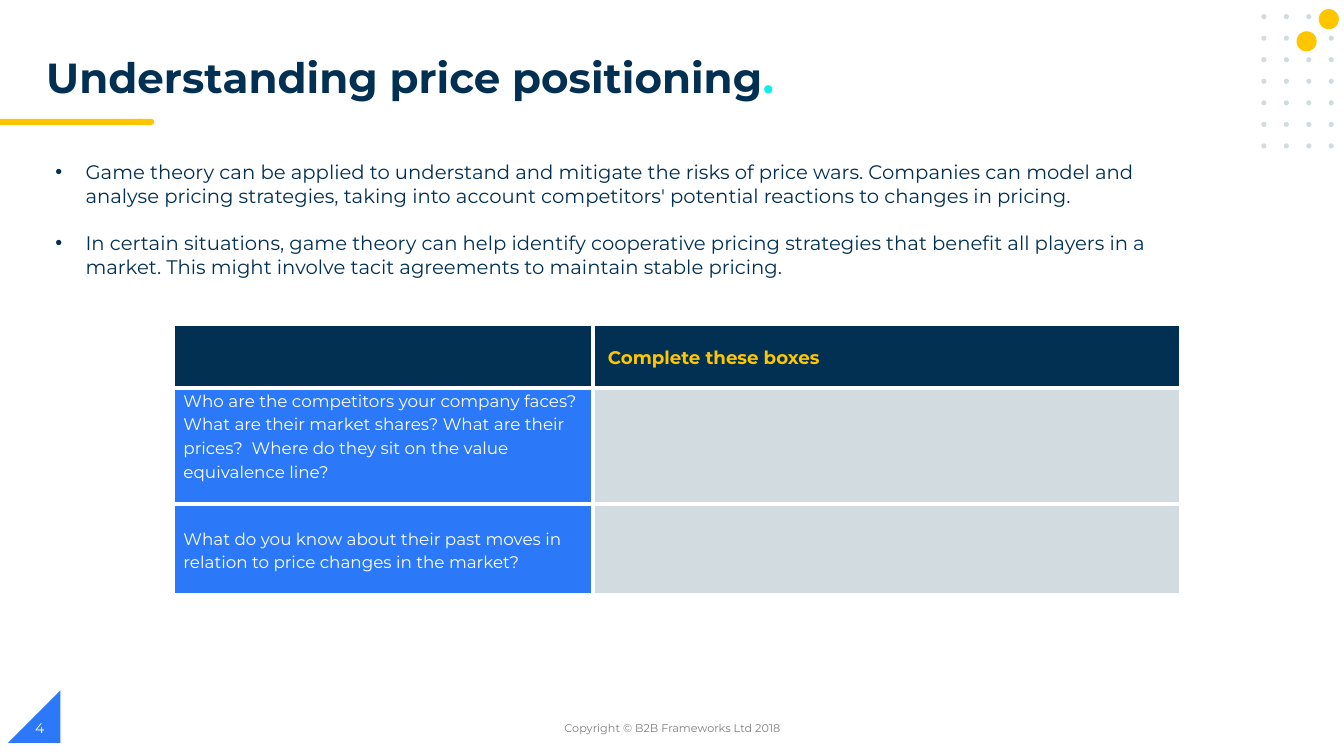
import pptx
import pptx.util
import pptx.dml.color
import pptx.enum.shapes
import pptx.enum.text
import pptx.oxml
import pptx.oxml.ns
from lxml import etree

RGB = pptx.dml.color.RGBColor
NAVY = RGB(0x02, 0x30, 0x53)
BLUE = RGB(0x2B, 0x79, 0xF8)
YELLOW = RGB(0xFF, 0xC6, 0x00)
CYAN = RGB(0x0E, 0xEC, 0xEC)
PALE = RGB(0xD1, 0xDB, 0xE0)
GREY = RGB(0x7F, 0x7F, 0x7F)
WHITE = RGB(0xFF, 0xFF, 0xFF)

SHAPE = pptx.enum.shapes.MSO_SHAPE
ANCHOR = pptx.enum.text.MSO_ANCHOR
ALIGN = pptx.enum.text.PP_ALIGN


class Deck:
    """Style and current slide; lengths are percent of slide width and height."""
    font = "Montserrat"

    def __init__(self, width, height):
        self.prs = pptx.Presentation()
        self.prs.slide_width = pptx.util.Inches(width)
        self.prs.slide_height = pptx.util.Inches(height)
        self.s = self.prs.slides.add_slide(self.prs.slide_layouts[6])

    def x(self, share):
        return round(self.prs.slide_width * share / 100)

    def y(self, share):
        return round(self.prs.slide_height * share / 100)

    def box(self, left, top, width, height):
        return self.x(left), self.y(top), self.x(width), self.y(height)

    def shape(self, kind, at, color, flip=False):
        sp = self.s.shapes.add_shape(kind, *self.box(*at))
        sp.shadow.inherit = False
        sp.fill.solid()
        sp.fill.fore_color.rgb = color
        sp.line.fill.background()
        if flip:
            sp._element.spPr.get_or_add_xfrm().set("flipH", "1")

    def run(self, p, text, size, color, bold=False):
        r = p.add_run()
        r.text = text
        r.font.name = self.font
        r.font.size = pptx.util.Pt(size)
        r.font.bold = bold
        r.font.color.rgb = color

    def frame(self, at, anchor=ANCHOR.TOP):
        tf = self.s.shapes.add_textbox(*self.box(*at)).text_frame
        tf.word_wrap = True
        tf.vertical_anchor = anchor
        return tf

    def text(self, at, runs, anchor=ANCHOR.TOP, align=ALIGN.LEFT, spacing=1.0):
        p = self.frame(at, anchor).paragraphs[0]
        p.alignment = align
        p.line_spacing = spacing
        for r in runs:
            self.run(p, *r)

    def bullets(self, at, items, size, color, gap):
        tf = self.frame(at)
        for i, item in enumerate(items):
            p = tf.add_paragraph() if i else tf.paragraphs[0]
            pPr = p._p.get_or_add_pPr()
            pPr.set("marL", str(pptx.util.Inches(0.31)))
            pPr.set("indent", str(pptx.util.Inches(-0.3)))
            if i:
                p.space_before = pptx.util.Pt(gap)
            buClr = etree.SubElement(pPr, pptx.oxml.ns.qn("a:buClr"))
            etree.SubElement(buClr, pptx.oxml.ns.qn("a:srgbClr"), val=str(color))
            etree.SubElement(pPr, pptx.oxml.ns.qn("a:buFont"), typeface="Arial")
            etree.SubElement(pPr, pptx.oxml.ns.qn("a:buChar"), char="•")
            self.run(p, item, size, color)

    def table(self, left, top, cols, rows):
        at = self.box(left, top, sum(cols), sum(rows))
        tb = self.s.shapes.add_table(len(rows), len(cols), *at).table
        tb.first_row = tb.horz_banding = False
        for col, width in zip(tb.columns, cols):
            col.width = self.x(width)
        for row, height in zip(tb.rows, rows):
            row.height = self.y(height)
        return tb

    def cell(self, c, fill, text="", size=12, color=WHITE, bold=False,
             anchor=ANCHOR.MIDDLE, inset=0.1):
        c.fill.solid()
        c.fill.fore_color.rgb = fill
        c.vertical_anchor = anchor
        c.margin_left = pptx.util.Inches(inset)
        c.margin_right = pptx.util.Inches(0.1)
        c.margin_top = c.margin_bottom = 0
        if text:
            p = c.text_frame.paragraphs[0]
            p.line_spacing = 1.15
            self.run(p, text, size, color, bold)
        # White borders go ahead of the fill
        tcPr = c._tc.get_or_add_tcPr()
        for i, side in enumerate("LRTB"):
            tcPr.insert(i, pptx.oxml.parse_xml(
                f'<a:ln{side} {pptx.oxml.ns.nsdecls("a")} w="{pptx.util.Pt(3)}">'
                f'<a:solidFill><a:srgbClr val="{WHITE}"/></a:solidFill></a:ln{side}>'))


def main():
    deck = Deck(13.33, 7.5)

    # Corner triangle and title rule
    deck.shape(SHAPE.RIGHT_TRIANGLE, (0.6, 91.33, 3.9, 6.93), BLUE, flip=True)
    deck.shape(SHAPE.FLOWCHART_TERMINATOR, (10.05, 15.73, 1.43, 0.8), YELLOW)
    deck.shape(SHAPE.RECTANGLE, (0, 15.73, 10.58, 0.8), YELLOW)

    # Dot grid with two highlights
    for row in range(7):
        for col in range(4):
            at = (93.85 + 1.67 * col, 1.87 + 2.85 * row, 0.38, 0.67)
            deck.shape(SHAPE.OVAL, at, PALE)
    for left, top in ((98.12, 1.2), (96.47, 4.13)):
        deck.shape(SHAPE.OVAL, (left, top, 1.5, 2.67), YELLOW)

    # Footer
    deck.text((33.16, 93.6, 33.76, 5.33),
              [("Copyright © B2B Frameworks Ltd 2018", 8, GREY)],
              ANCHOR.MIDDLE, ALIGN.CENTER)
    deck.text((1.88, 93.6, 22.5, 5.33), [("4", 10, WHITE)], ANCHOR.MIDDLE)

    # Title and bullets
    deck.text((2.7, 6.93, 69.54, 8),
              [("Understanding price positioning", 30, NAVY, True),
               (".", 30, CYAN, True)], spacing=0.9)
    deck.bullets((3.3, 20.53, 85.75, 17.07), [
        "Game theory can be applied to understand and mitigate the risks of price "
        "wars. Companies can model and analyse pricing strategies, taking into "
        "account competitors' potential reactions to changes in pricing.",
        "In certain situations, game theory can help identify cooperative pricing "
        "strategies that benefit all players in a market. This might involve tacit "
        "agreements to maintain stable pricing.",
    ], 14, NAVY, gap=17)

    # Worksheet table
    tb = deck.table(12.9, 42.93, (31.21, 43.74), (8.4, 15.33, 12))
    deck.cell(tb.cell(0, 0), NAVY)
    deck.cell(tb.cell(0, 1), NAVY, "Complete these boxes", 13, YELLOW, True,
              inset=0.15)
    questions = (
        ("Who are the competitors your company faces? What are their market "
         "shares? What are their prices?  Where do they sit on the value "
         "equivalence line?", ANCHOR.TOP),
        ("What do you know about their past moves in relation to price changes "
         "in the market?", ANCHOR.MIDDLE),
    )
    for row, (question, anchor) in enumerate(questions, 1):
        deck.cell(tb.cell(row, 0), BLUE, question, anchor=anchor)
        deck.cell(tb.cell(row, 1), PALE)

    deck.prs.save("out.pptx")


if __name__ == "__main__":
    main()
